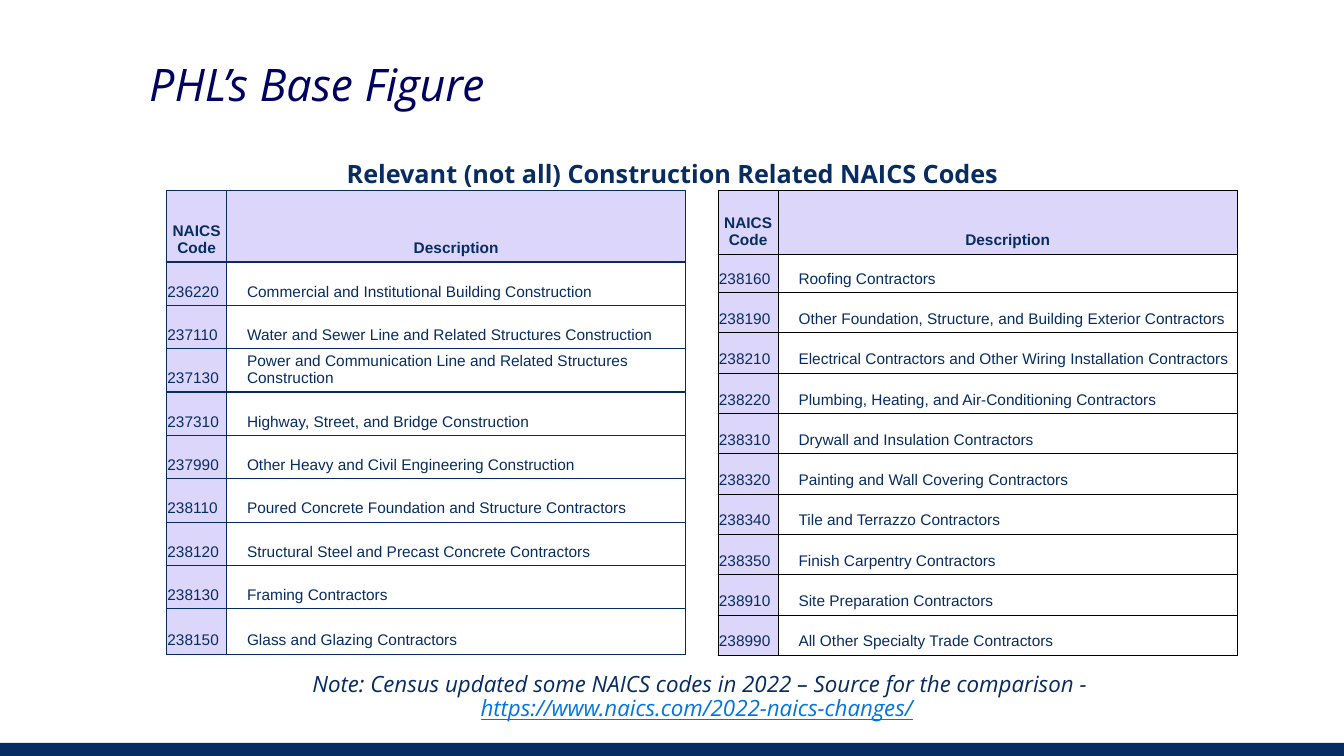
import pptx
import pptx.dml.color
import pptx.enum.shapes
import pptx.enum.text
import pptx.oxml
import pptx.oxml.ns
import pptx.util
from pptx.util import Inches

COLORS = {"navy": "072C62", "title": "000060", "lavender": "DCD6FA",
          "link": "0176E0", "black": "000000"}
ALIGN = pptx.enum.text.PP_ALIGN
ANCHOR = pptx.enum.text.MSO_ANCHOR

LEFT_CODES = [
    ("236220", "Commercial and Institutional Building Construction"),
    ("237110", "Water and Sewer Line and Related Structures Construction"),
    ("237130", "Power and Communication Line and Related Structures Construction"),
    ("237310", "Highway, Street, and Bridge Construction"),
    ("237990", "Other Heavy and Civil Engineering Construction"),
    ("238110", "Poured Concrete Foundation and Structure Contractors"),
    ("238120", "Structural Steel and Precast Concrete Contractors"),
    ("238130", "Framing Contractors"),
    ("238150", "Glass and Glazing Contractors"),
]
RIGHT_CODES = [
    ("238160", "Roofing Contractors"),
    ("238190", "Other Foundation, Structure, and Building Exterior Contractors"),
    ("238210", "Electrical Contractors and Other Wiring Installation Contractors"),
    ("238220", "Plumbing, Heating, and Air-Conditioning Contractors"),
    ("238310", "Drywall and Insulation Contractors"),
    ("238320", "Painting and Wall Covering Contractors"),
    ("238340", "Tile and Terrazzo Contractors"),
    ("238350", "Finish Carpentry Contractors"),
    ("238910", "Site Preparation Contractors"),
    ("238990", "All Other Specialty Trade Contractors"),
]


def rgb(name):
    return pptx.dml.color.RGBColor.from_string(COLORS[name])


def set_values(target, values):
    for name, value in values.items():
        setattr(target, name, value)


def add_span(para, text, size, color="navy", name="Open Sans", **values):
    span = para.add_run()
    span.text = text
    set_values(span.font, {"size": pptx.util.Pt(size), "name": name, **values})
    span.font.color.rgb = rgb(color)


def format_frame(frame, anchor=ANCHOR.TOP, inset=0.05):
    set_values(frame, {
        "word_wrap": True, "vertical_anchor": anchor,
        "auto_size": pptx.enum.text.MSO_AUTO_SIZE.NONE,
        "margin_left": Inches(0.1), "margin_right": Inches(0.1),
        "margin_top": Inches(inset), "margin_bottom": Inches(inset)})


def add_title(page, text):
    title = page.shapes.title
    set_values(title, {"left": Inches(1.38), "top": Inches(0.51),
                       "width": Inches(7.51), "height": Inches(0.63)})
    format_frame(title.text_frame, ANCHOR.MIDDLE)
    para = title.text_frame.paragraphs[0]
    para.alignment = ALIGN.LEFT
    add_span(para, text, 32, "title", italic=True)


def add_centered_box(page, left, top, width, height, inset=0.05):
    box = page.shapes.add_textbox(Inches(left), Inches(top), Inches(width), Inches(height))
    format_frame(box.text_frame, inset=inset)
    para = box.text_frame.paragraphs[0]
    set_values(para, {"alignment": ALIGN.CENTER, "line_spacing": 0.9})
    return para


def add_footer_bar(page):
    bar = page.shapes.add_shape(pptx.enum.shapes.MSO_SHAPE.RECTANGLE, 0,
                                Inches(7.37), Inches(13.33), Inches(0.13))
    bar.shadow.inherit = False
    bar.fill.solid()
    bar.fill.fore_color.rgb = rgb("navy")
    bar.line.fill.background()


def set_borders(cell, color, points):
    properties = cell._tc.get_or_add_tcPr()
    for index, side in enumerate(("lnL", "lnR", "lnT", "lnB")):
        properties.insert(index, pptx.oxml.parse_xml(
            f'<a:{side} {pptx.oxml.ns.nsdecls("a")} w="{pptx.util.Pt(points)}">'
            f'<a:solidFill><a:srgbClr val="{COLORS[color]}"/></a:solidFill></a:{side}>'))


def fill_cell(cell, text, header, code):
    if header or code:
        cell.fill.solid()
        cell.fill.fore_color.rgb = rgb("lavender")
    else:
        cell.fill.background()
    indent = 0.01 if header or code else 0.2
    set_values(cell, {"vertical_anchor": ANCHOR.BOTTOM, "margin_left": Inches(indent),
                      "margin_right": Inches(0.01), "margin_top": Inches(0.01),
                      "margin_bottom": Inches(0.05)})
    para = cell.text_frame.paragraphs[0]
    para.alignment = ALIGN.CENTER if header else ALIGN.LEFT
    add_span(para, text, 11, name="Arial", bold=header)


def add_code_table(page, left, codes, heights, border_color, border_points):
    rows = [("NAICS Code", "Description")] + codes
    table = page.shapes.add_table(len(rows), 2, Inches(left), Inches(1.89),
                                  Inches(5.15), Inches(sum(heights))).table
    set_values(table, {"first_row": False, "horz_banding": False})
    for column, width in zip(table.columns, (0.6, 4.55)):
        column.width = Inches(width)
    for row_index, (row, height) in enumerate(zip(rows, heights)):
        table.rows[row_index].height = Inches(height)
        for column_index, text in enumerate(row):
            cell = table.cell(row_index, column_index)
            fill_cell(cell, text, row_index == 0, column_index == 0)
            set_borders(cell, border_color, border_points)


def main():
    deck = pptx.Presentation()
    set_values(deck, {"slide_width": Inches(13.33), "slide_height": Inches(7.5)})
    page = deck.slides.add_slide(deck.slide_layouts[5])

    # Footer bar and headings
    add_footer_bar(page)
    add_title(page, "PHL’s Base Figure")
    heading = add_centered_box(page, 0.92, 1.58, 11.5, 5.06, inset=0.02)
    add_span(heading, "Relevant (not all) Construction Related NAICS Codes", 18, bold=True)

    # Source note
    note = add_centered_box(page, 2.95, 6.63, 7.98, 0.64)
    add_span(note, "Note: Census updated some NAICS codes in 2022 – Source for the comparison - ",
             16, italic=True)
    add_span(note, "https://www.naics.com/2022-naics-changes/", 16, "link",
             italic=True, underline=True)
    add_span(note, " ", 16, italic=True)

    # Code tables
    add_code_table(page, 1.65, LEFT_CODES, [0.71] + [0.43] * 8 + [0.45], "navy", 1)
    add_code_table(page, 7.12, RIGHT_CODES, [0.63, 0.38] + [0.4] * 9, "black", 0.5)

    deck.save("out.pptx")


if __name__ == "__main__":
    main()
